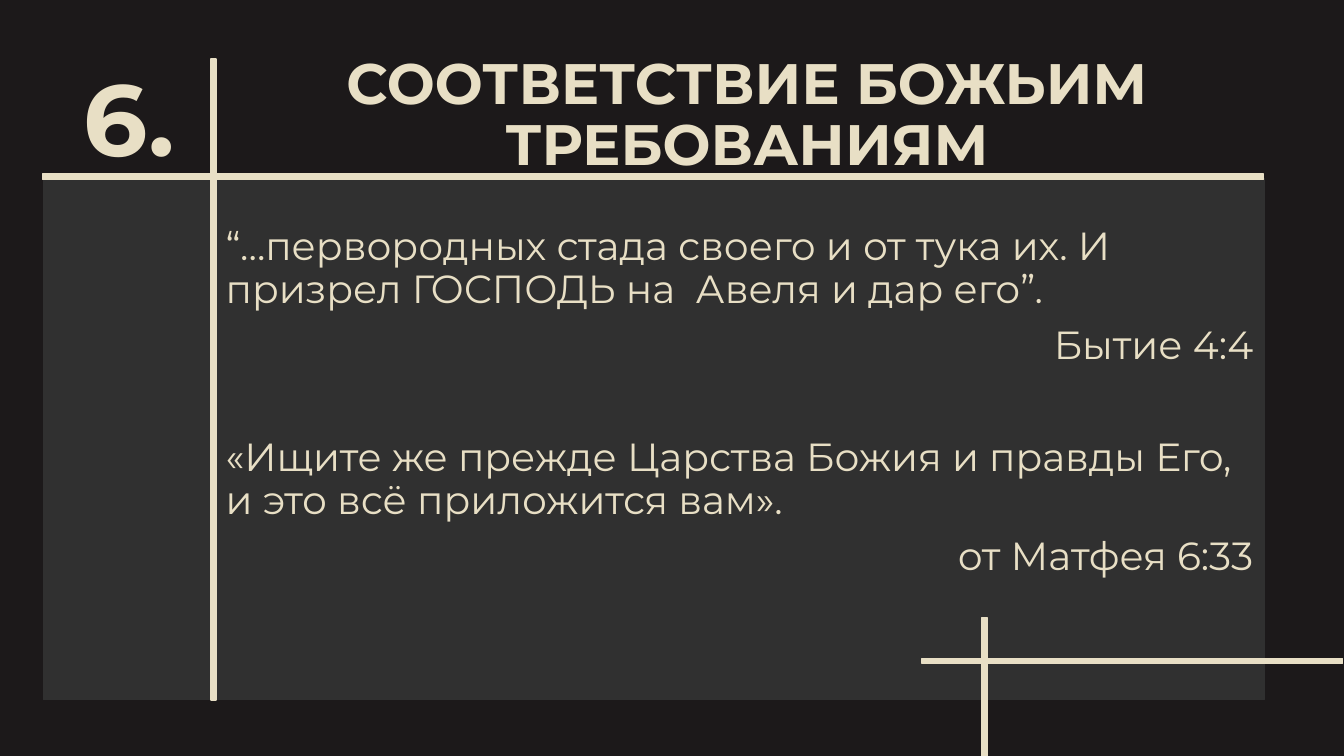
from pptx import Presentation
from pptx.dml.color import RGBColor
from pptx.enum.shapes import MSO_SHAPE
from pptx.enum.text import MSO_ANCHOR, MSO_AUTO_SIZE, PP_ALIGN
from pptx.util import Cm, Pt

BACKGROUND, PANEL, CREAM = "1C191A", "303030", "E8DFC5"
BAR_THICKNESS = 0.13


def color(value):
    return RGBColor.from_string(value)


def set_values(target, values):
    for name, value in values.items():
        setattr(target, name, value)


class SlideBuilder:
    font_name = "Montserrat"

    def __init__(self, presentation):
        self.slide = presentation.slides.add_slide(presentation.slide_layouts[5])
        self.slide.background.fill.solid()
        self.slide.background.fill.fore_color.rgb = color(BACKGROUND)

    def rectangle(self, left, top, width, height, fill):
        shape = self.slide.shapes.add_shape(
            MSO_SHAPE.RECTANGLE, Cm(left), Cm(top), Cm(width), Cm(height))
        shape.shadow.inherit = False
        shape.fill.solid()
        shape.fill.fore_color.rgb = color(fill)
        shape.line.color.rgb = color(fill)
        shape.line.width = Pt(1)

    def horizontal_bar(self, left, top, length):
        self.rectangle(left, top, length, BAR_THICKNESS, CREAM)

    def vertical_bar(self, left, top, length):
        self.rectangle(left, top, BAR_THICKNESS, length, CREAM)

    def fill_text(self, shape, paragraphs, size, bold=False,
                  anchor=MSO_ANCHOR.MIDDLE, margin_top=0.13):
        frame = shape.text_frame
        set_values(frame, {"word_wrap": True, "auto_size": MSO_AUTO_SIZE.NONE,
                           "vertical_anchor": anchor, "margin_top": Cm(margin_top)})
        frame.text = "\n".join(text for text, _, _ in paragraphs)
        for paragraph, (_, alignment, gap) in zip(frame.paragraphs, paragraphs):
            set_values(paragraph, {"alignment": alignment, "line_spacing": 0.9,
                                   "space_before": Pt(gap)})
            font = paragraph.runs[0].font
            set_values(font, {"name": self.font_name, "size": Pt(size), "bold": bold})
            font.color.rgb = color(CREAM)

    def title(self, left, top, width, height, text, size):
        shape = self.slide.shapes.title
        set_values(shape, {"left": Cm(left), "top": Cm(top),
                           "width": Cm(width), "height": Cm(height)})
        self.fill_text(shape, [(text, PP_ALIGN.CENTER, 0)], size, bold=True)

    def text_box(self, left, top, width, height, paragraphs, size, **style):
        shape = self.slide.shapes.add_textbox(
            Cm(left), Cm(top), Cm(width), Cm(height))
        self.fill_text(shape, paragraphs, size, **style)


def main():
    presentation = Presentation()
    set_values(presentation, {"slide_width": Cm(33.87), "slide_height": Cm(19.05)})
    builder = SlideBuilder(presentation)

    builder.rectangle(1.09, 4.5, 30.78, 13.13, PANEL)
    builder.text_box(1.14, 1.52, 4.24, 3.2, [("6.", PP_ALIGN.CENTER, 0)], 72, bold=True)
    builder.title(5.69, 1.37, 26.26, 3.12, "СООТВЕТСТВИЕ БОЖЬИМ ТРЕБОВАНИЯМ", 40.7)

    verses = [
        ("“…первородных стада своего и от тука их. И призрел ГОСПОДЬ на  Авеля и дар его”.",
         PP_ALIGN.LEFT, 0),
        ("Бытие 4:4", PP_ALIGN.RIGHT, 10),
        ("«Ищите же прежде Царства Божия и правды Его, и это всё приложится вам».",
         PP_ALIGN.LEFT, 50),
        ("от Матфея 6:33", PP_ALIGN.RIGHT, 10),
    ]
    builder.text_box(5.44, 4.39, 26.39, 12.09, verses, 28,
                     anchor=MSO_ANCHOR.TOP, margin_top=1.33)

    builder.vertical_bar(5.32, 1.49, 16.15)
    builder.horizontal_bar(1.07, 4.39, 30.78)
    builder.vertical_bar(24.75, 15.56, 3.49)
    builder.horizontal_bar(23.24, 16.59, 10.6)

    presentation.save("out.pptx")


if __name__ == "__main__":
    main()
